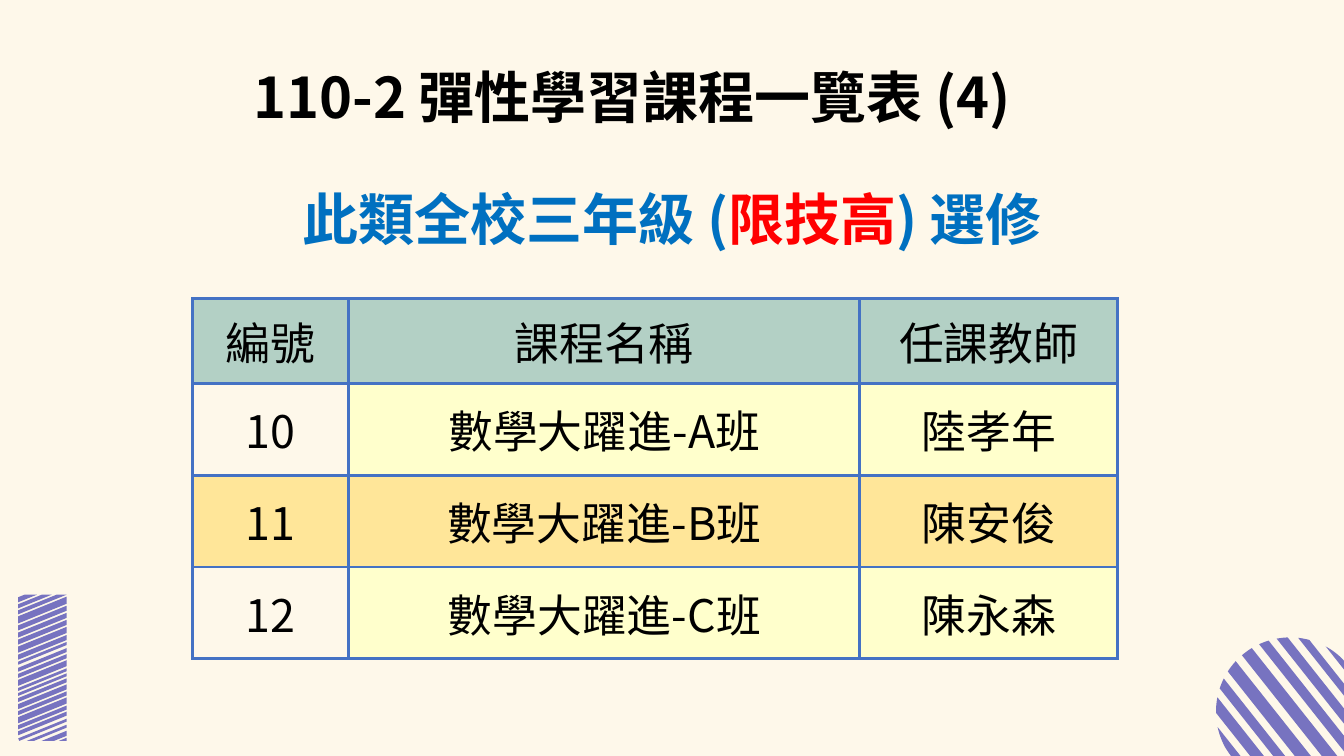
import math

from lxml import etree
from pptx import Presentation
from pptx.dml.color import RGBColor
from pptx.enum.text import MSO_ANCHOR, PP_ALIGN
from pptx.oxml.ns import qn
from pptx.util import Pt

CENTER = PP_ALIGN.CENTER
MIDDLE = MSO_ANCHOR.MIDDLE
TOP = MSO_ANCHOR.TOP

FONT = "Noto Sans CJK SC"
CREAM, VIOLET, BLACK = "FEF8EA", "7773C0", "000000"
BLUE, RED, BORDER = "0070C0", "FF0000", "4472C4"
GREEN, YELLOW, AMBER = "B3D0C5", "FFFFCC", "FFE699"

COLUMNS = [111.6, 365, 184.3]
ROWS = [50.4, 65.5, 65.5, 65.5]
COURSES = [
    ("編號", "課程名稱", "任課教師"),
    ("10", "數學大躍進-A班", "陸孝年"),
    ("11", "數學大躍進-B班", "陳安俊"),
    ("12", "數學大躍進-C班", "陳永森"),
]
FILLS = [[GREEN] * 3, [None, YELLOW, YELLOW], [AMBER] * 3, [None, YELLOW, YELLOW]]

DISC_BANDS = [
    (-53, -47.5), (-42.1, -34.4), (-29.2, -22.5), (-17.1, -8.1), (-2, 6.7),
    (12.5, 19.4), (24.8, 31.5), (37.2, 42.5), (48.8, 53),
]
BAR_BANDS = [
    (412.6, 416.2), (417.6, 420.5), (421.9, 424.8), (426.2, 431.3), (432.7, 436.3),
    (437.8, 441.4), (442.8, 446.4), (447.8, 452.2), (453.6, 457.2), (458.6, 460.8),
    (463, 465.8), (467.3, 470.2), (471.6, 475.9), (477.4, 479.5), (481, 483.1),
    (484.6, 487.4), (488.9, 492.5), (493.9, 496.8), (498.2, 502.6), (504, 506.9),
    (508.3, 511.2), (513.4, 515.5), (517.7, 519.8), (522, 525.6), (527, 529.2),
]


def color(value):
    return RGBColor.from_string(value)


def add_run(p, text, size=32, fill=BLACK, bold=False):
    r = p.add_run()
    r.text = text
    r.font.size = Pt(size)
    r.font.bold = bold
    r.font.name = FONT
    r.font.color.rgb = color(fill)
    ea = etree.SubElement(r.font._element, qn("a:ea"))
    ea.set("typeface", FONT)


def disc_stripes(cx, cy, radius, degrees, steps=8):
    angle = math.radians(degrees)
    ux, uy = math.cos(angle), math.sin(angle)

    def point(offset, side):
        along = side * math.sqrt(max(0, radius**2 - offset**2))
        return cx + along * ux + offset * uy, cy + along * uy - offset * ux

    stripes = []
    for low, high in DISC_BANDS:
        offsets = [low + (high - low) * i / steps for i in range(steps + 1)]
        far = [point(o, 1) for o in offsets]
        near = [point(o, -1) for o in reversed(offsets)]
        stripes.append(far + near)
    return stripes


def bar_stripes(left, right, top, bottom, rise):
    slope = rise / (right - left)

    def edge(y):
        start = max(0, top - y)
        end = min(rise, bottom - y)
        return [(right - d / slope, y + d) for d in (start, end)]

    return [edge(low) + edge(high)[::-1] for low, high in BAR_BANDS]


class SlideBuilder:
    def __init__(self, prs):
        self.s = prs.slides.add_slide(prs.slide_layouts[6])
        self.s.background.fill.solid()
        self.s.background.fill.fore_color.rgb = color(CREAM)

    def stripes(self, polygons):
        outlines = [[(Pt(x), Pt(y)) for x, y in polygon] for polygon in polygons]
        builder = self.s.shapes.build_freeform(*outlines[0][0])
        for i, outline in enumerate(outlines):
            if i:
                builder.move_to(*outline[0])
            builder.add_line_segments(outline[1:], close=True)
        sp = builder.convert_to_shape()
        sp.shadow.inherit = False
        sp.fill.solid()
        sp.fill.fore_color.rgb = color(VIOLET)
        sp.line.fill.background()

    def heading(self, left, top, width, height, runs, spacing, right_inset=7.2):
        sp = self.s.shapes.add_textbox(Pt(left), Pt(top), Pt(width), Pt(height))
        tf = sp.text_frame
        tf.word_wrap = True
        tf.vertical_anchor = TOP
        tf.margin_left = tf.margin_top = tf.margin_bottom = Pt(7.2)
        tf.margin_right = Pt(right_inset)
        p = tf.paragraphs[0]
        p.alignment = CENTER
        p.line_spacing = spacing
        for text, fill in runs:
            add_run(p, text, size=40, fill=fill, bold=True)

    def borders(self, cell):
        tc_pr = cell._tc.get_or_add_tcPr()
        for i, side in enumerate(("lnL", "lnR", "lnT", "lnB")):
            ln = etree.Element(qn(f"a:{side}"), w=str(Pt(2.25)))
            solid = etree.SubElement(ln, qn("a:solidFill"))
            etree.SubElement(solid, qn("a:srgbClr"), val=BORDER)
            tc_pr.insert(i, ln)

    def cell(self, cell, text, fill, inset):
        cell.margin_left = cell.margin_right = Pt(inset)
        cell.margin_top = cell.margin_bottom = Pt(inset)
        cell.vertical_anchor = MIDDLE
        if fill:
            cell.fill.solid()
            cell.fill.fore_color.rgb = color(fill)
        else:
            cell.fill.background()
        p = cell.text_frame.paragraphs[0]
        p.alignment = CENTER
        add_run(p, text)
        self.borders(cell)

    def table(self, left, top):
        frame = self.s.shapes.add_table(
            len(ROWS), len(COLUMNS), Pt(left), Pt(top), Pt(sum(COLUMNS)), Pt(sum(ROWS))
        )
        table = frame.table
        table.horz_banding = False
        for column, width in zip(table.columns, COLUMNS):
            column.width = Pt(width)
        for i, height in enumerate(ROWS):
            table.rows[i].height = Pt(height)
            for j, text in enumerate(COURSES[i]):
                self.cell(table.cell(i, j), text, FILLS[i][j], 0.7 if i else 7.2)


def main():
    prs = Presentation()
    prs.slide_width, prs.slide_height = Pt(960), Pt(540)
    slide = SlideBuilder(prs)
    slide.stripes(disc_stripes(921.6, 508.3, 53, 51.6))
    slide.stripes(bar_stripes(13, 47.5, 424.8, 529.2, 14))
    slide.table(137.5, 213.1)
    audience = [("此類全校三年級 (", BLUE), ("限技高", RED), (") 選修", BLUE)]
    slide.heading(70.6, 117.4, 836.6, 76.3, audience, 1.15, right_inset=24.5)
    title = [("110-2 彈性學習課程一覽表 (4)", BLACK)]
    slide.heading(115.9, 43.2, 671, 65.5, title, 0.9)
    prs.save("out.pptx")


if __name__ == "__main__":
    main()
